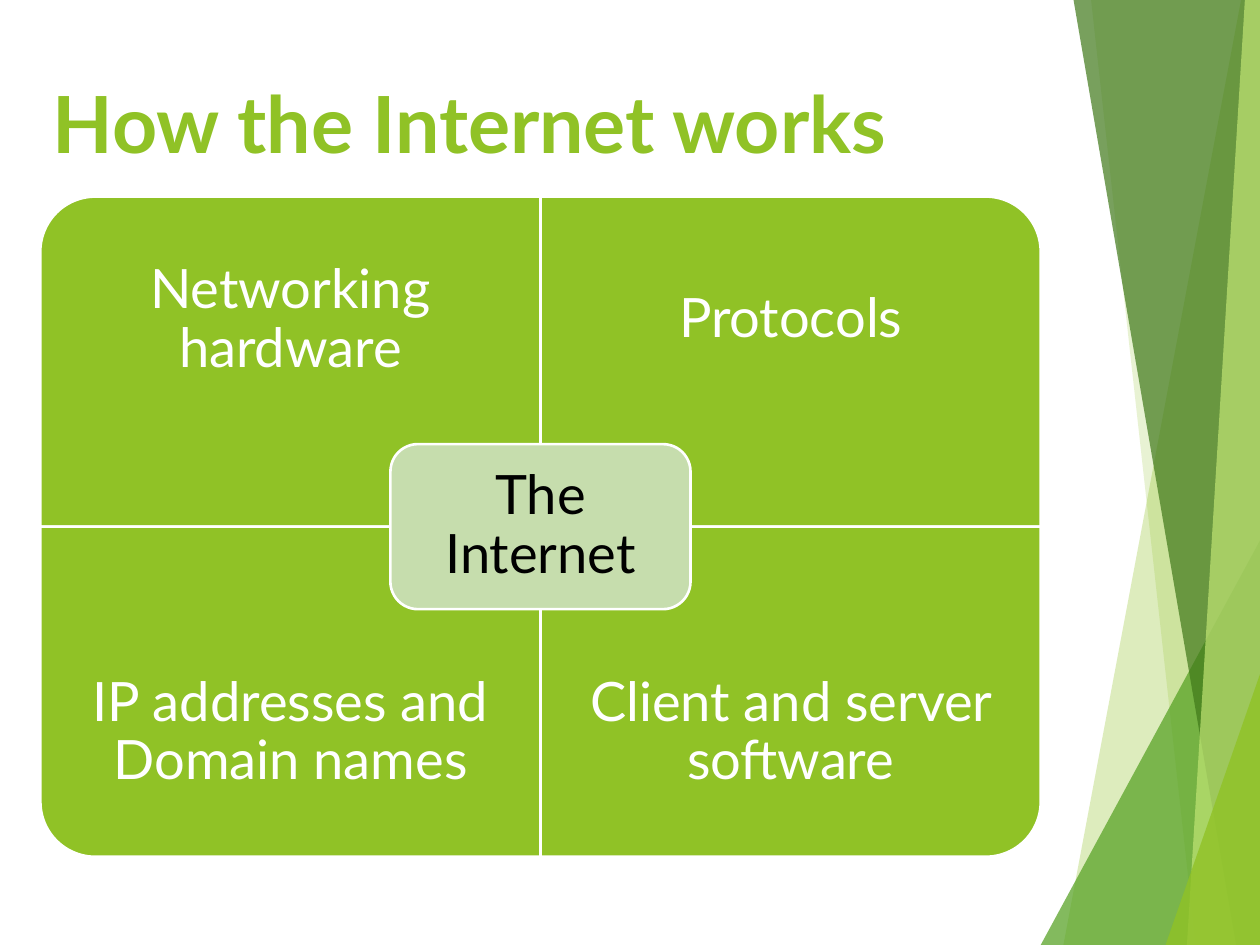
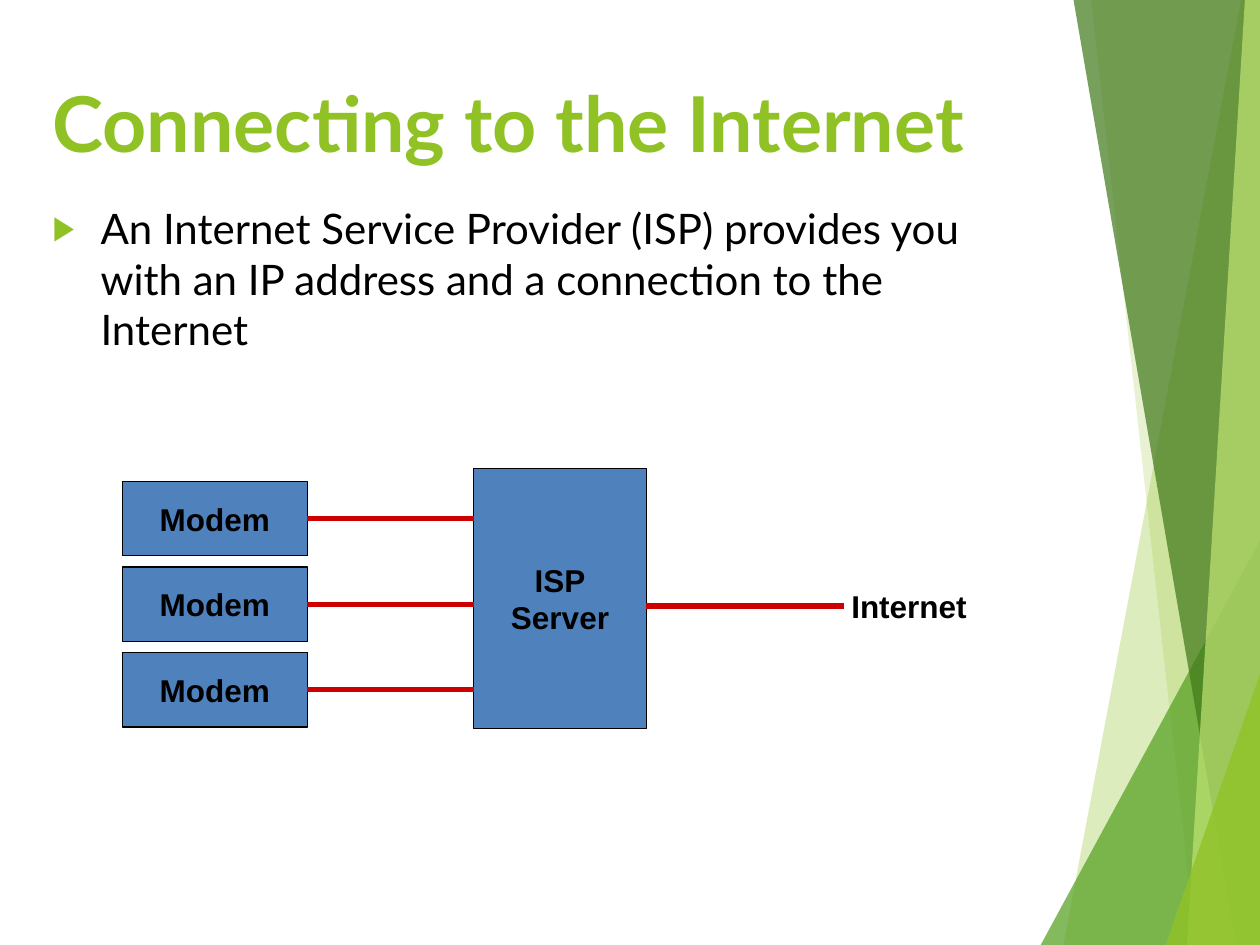
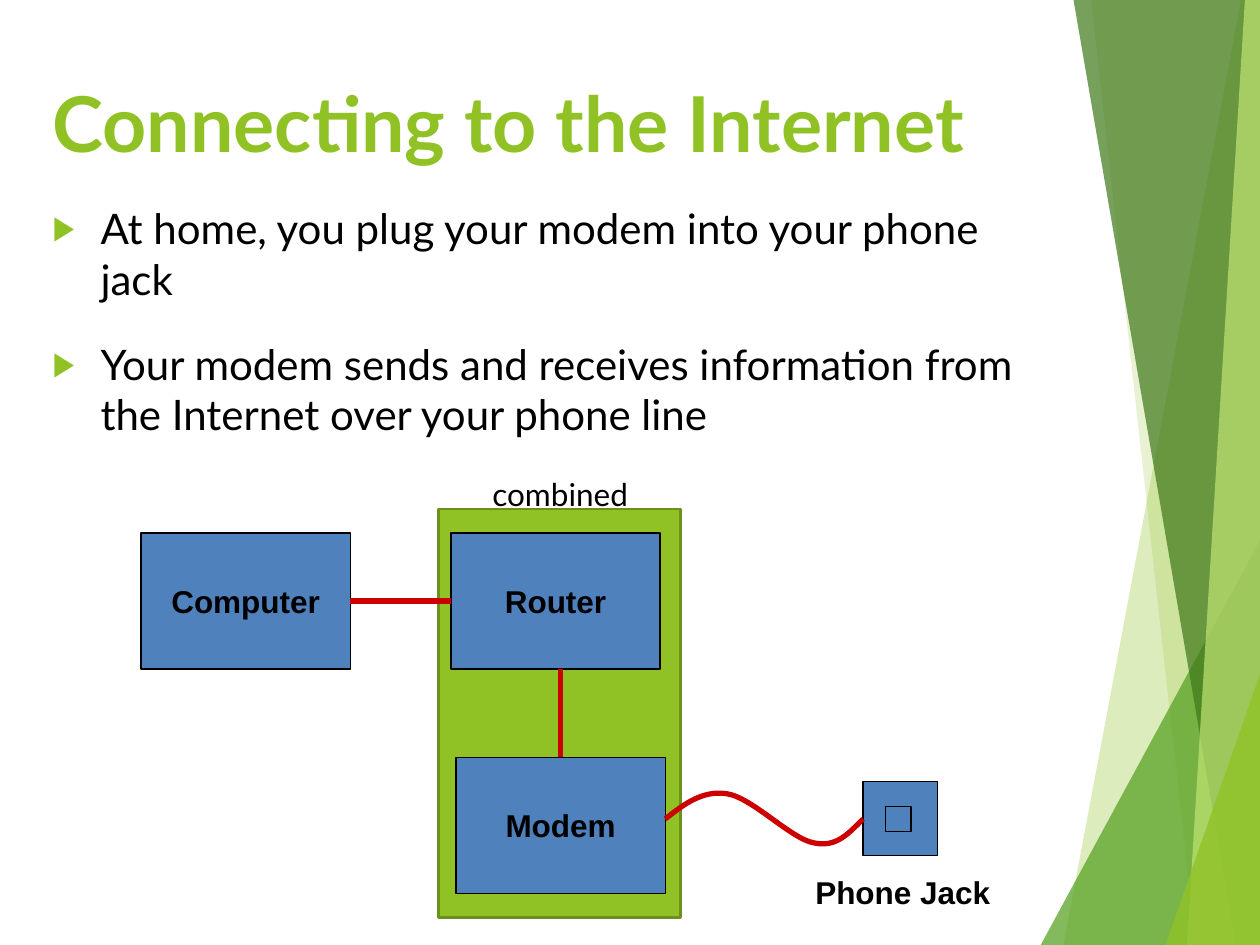
from lxml.etree import SubElement
from pptx import Presentation
from pptx.dml.color import RGBColor
from pptx.enum.shapes import MSO_CONNECTOR, MSO_SHAPE
from pptx.enum.text import MSO_ANCHOR, PP_ALIGN
from pptx.oxml.ns import qn
from pptx.util import Inches, Pt

rgb = RGBColor.from_string
LIME, BLUE, RED = "90C226", "4F81BD", "CC0000"
BLACK, WHITE = "000000", "FFFFFF"

# Content grid: two columns, two rows
LEFT, TOP, COL, ROW = 0.32, 1.56, 3.97, 2.62
WIDTH = 2 * COL


def paint(sp, fill=None, line=None, width=0.75, alpha=100):
    sp.shadow.inherit = False
    if fill:
        sp.fill.solid()
        sp.fill.fore_color.rgb = rgb(fill)
        if alpha < 100:
            clr = sp._element.spPr.find(".//" + qn("a:srgbClr"))
            SubElement(clr, qn("a:alpha"), val=str(alpha * 1000))
    else:
        sp.fill.background()
    if line:
        sp.line.color.rgb = rgb(line)
        sp.line.width = Pt(width)
    else:
        sp.line.fill.background()


def write(sp, texts, size, font="Lato", color=BLACK, bold=False, wrap=True,
          align=PP_ALIGN.CENTER, anchor=MSO_ANCHOR.MIDDLE, inset=None, spacing=None):
    tf = sp.text_frame
    tf.word_wrap = wrap
    tf.vertical_anchor = anchor
    if inset is not None:
        tf.margin_left = tf.margin_right = tf.margin_top = tf.margin_bottom = Inches(inset)
    for i, text in enumerate(texts):
        p = tf.add_paragraph() if i else tf.paragraphs[0]
        p.alignment = align
        p.line_spacing = spacing
        for j, line in enumerate(text.split("\n")):
            if j:
                p.add_line_break()
            r = p.add_run()
            r.text = line
            r.font.size, r.font.name, r.font.bold = Pt(size), font, bold
            r.font.color.rgb = rgb(color)
    return tf


prs = Presentation()
prs.slide_width, prs.slide_height = Inches(10), Inches(7.5)

# Shared side bands: colour, opacity, corners
BANDS = [
    (LIME, 30, [(9.85, 0), (8.44, 7.5), (10, 7.5), (10, 0)]),
    (LIME, 20, [(8.66, 0), (9.49, 7.5), (10, 7.5), (10, 0)]),
    ("54A021", 72, [(8.26, 7.5), (10, 4.29), (10, 7.5)]),
    ("3F7819", 70, [(8.52, 0), (9.81, 7.5), (10, 7.5), (10, 0)]),
    ("C0E474", 70, [(9.88, 0), (9.42, 7.5), (10, 7.5), (10, 0)]),
    (LIME, 80, [(9.25, 7.5), (10, 5.35), (10, 7.5)]),
]

# Title, title size and bullets of each slide
PAGES = [
    ("How the Internet works", 45, []),
    ("Connecting to the Internet", 44, [
        "An Internet Service Provider (ISP) provides you with an IP address "
        "and a connection to the Internet"]),
    ("Connecting to the Internet", 44, [
        "At home, you plug your modem into your phone jack",
        "Your modem sends and receives information from the Internet over your phone line"]),
]

for title, size, bullets in PAGES:
    s = prs.slides.add_slide(prs.slide_layouts[6])
    for color, alpha, corners in BANDS:
        start, *rest = [(Inches(x), Inches(y)) for x, y in corners]
        fb = s.shapes.build_freeform(*start)
        fb.add_line_segments(rest, close=True)
        paint(fb.convert_to_shape(), color, alpha=alpha)
    sp = s.shapes.add_textbox(Inches(LEFT), Inches(0.37), Inches(WIDTH), Inches(1.19))
    write(sp, [title], size, color=LIME, bold=True, align=PP_ALIGN.LEFT)
    if bullets:
        sp = s.shapes.add_textbox(Inches(LEFT), Inches(TOP), Inches(WIDTH), Inches(2 * ROW))
        tf = write(sp, bullets, 24, align=PP_ALIGN.LEFT, anchor=MSO_ANCHOR.TOP)
        for p in tf.paragraphs:
            p.space_before = Pt(20)
            pPr = p._p.get_or_add_pPr()
            pPr.set("marL", str(Inches(0.38)))
            pPr.set("indent", str(-Inches(0.38)))
            SubElement(SubElement(pPr, qn("a:buClr")), qn("a:srgbClr"), val=LIME)
            SubElement(pPr, qn("a:buSzPct"), val="80000")
            SubElement(pPr, qn("a:buFont"), typeface="Arial")
            SubElement(pPr, qn("a:buChar"), char="▶")

works, isp, home = prs.slides

# Slide 1: four quadrants, each with its round corner outwards
QUADRANTS = [("Networking hardware", 270), ("Protocols", 0),
             ("IP addresses and Domain names", 180), ("Client and server software", 90)]
TEXT_H = 0.75 * ROW
for i, (text, turn) in enumerate(QUADRANTS):
    row, col = divmod(i, 2)
    x, y = LEFT + col * COL, TOP + row * ROW
    w, h = (ROW, COL) if turn % 180 else (COL, ROW)
    sp = works.shapes.add_shape(MSO_SHAPE.ROUND_1_RECTANGLE, Inches(x + (COL - w) / 2),
                                Inches(y + (ROW - h) / 2), Inches(w), Inches(h))
    sp.rotation = turn
    paint(sp, LIME, WHITE, 1.5)
    sp = works.shapes.add_textbox(Inches(x), Inches(y + row * (ROW - TEXT_H)),
                                  Inches(COL), Inches(TEXT_H))
    write(sp, [text], 31, color=WHITE, inset=0.24, spacing=0.9)

# Slide 1: centre
w, h = 0.6 * COL, 0.5 * ROW
sp = works.shapes.add_shape(MSO_SHAPE.ROUNDED_RECTANGLE, Inches(LEFT + COL - w / 2),
                            Inches(TOP + ROW - h / 2), Inches(w), Inches(h))
paint(sp, "C6DDAD", WHITE, 1.5)
write(sp, ["The Internet"], 31, inset=0.19, spacing=0.9)

# Slide 3: panel behind router and modem
panel = home.shapes.add_shape(MSO_SHAPE.RECTANGLE, Inches(3.48), Inches(4.04),
                              Inches(1.92), Inches(3.24))
paint(panel, LIME, "6B901C", 1.5)

# Device boxes of slides 2 and 3
MODEM_H = 0.59
modem_tops = [3.82 + i * 0.68 for i in range(3)]
DEVICES = [(isp, "Modem", 0.97, y, 1.47, MODEM_H) for y in modem_tops] + [
    (isp, "ISP\nServer", 3.76, 3.72, 1.37, 2.06),
    (home, "Computer", 1.12, 4.23, 1.66, 1.08),
    (home, "Router", 3.58, 4.23, 1.66, 1.08),
    (home, "Modem", 3.62, 6.01, 1.66, 1.08),
    (home, "", 6.85, 6.2, 0.59, 0.59),
    (home, "", 7.03, 6.4, 0.2, 0.2),
]
boxes = []
for s, text, *at in DEVICES:
    sp = s.shapes.add_shape(MSO_SHAPE.RECTANGLE, *map(Inches, at))
    paint(sp, BLUE, BLACK)
    if text:
        write(sp, [text], 18, "Arial", bold=True, wrap=False)
    boxes.append(sp)
*modems, server, computer, router, modem, jack, socket = boxes

# Cables: slide, ends, joined box and side at each end
CABLES = [(isp, (2.44, y + MODEM_H / 2, 3.76, y + MODEM_H / 2), (m, 3), None)
          for m, y in zip(modems, modem_tops)] + [
    (isp, (5.13, 4.81, 6.7, 4.81), None, None),
    (home, (2.78, 4.77, 3.58, 4.77), (computer, 3), (router, 1)),
    (home, (4.45, 5.31, 4.45, 6.01), None, (modem, 0)),
]
for s, ends, start, stop in CABLES:
    line = s.shapes.add_connector(MSO_CONNECTOR.STRAIGHT, *map(Inches, ends))
    if start:
        line.begin_connect(*start)
    if stop:
        line.end_connect(*stop)
    line.line.color.rgb = rgb(RED)
    line.line.width = Pt(3)
    SubElement(line._element.spPr, qn("a:effectLst"))

# Slide 3: wavy phone line, three Bezier points per curve
WAVE = [(5.28, 6.5),
        (5.43, 6.38), (5.58, 6.27), (5.77, 6.3),
        (5.97, 6.33), (6.28, 6.66), (6.46, 6.69),
        (6.64, 6.73), (6.74, 6.61), (6.85, 6.5)]
start, *rest = [(Inches(x), Inches(y)) for x, y in WAVE]
fb = home.shapes.build_freeform(*start)
fb.add_line_segments(rest, close=False)
wave = fb.convert_to_shape()
paint(wave, line=RED, width=3)
segments = list(wave._element.iter(qn("a:lnTo")))
outline = segments[0].getparent()
for i in range(0, len(segments), 3):
    curve = SubElement(outline, qn("a:cubicBezTo"))
    for segment in segments[i:i + 3]:
        curve.append(segment[0])
        outline.remove(segment)

# Free labels
for s, text, x, y, w in [(isp, "Internet", 6.65, 4.61, 1.13),
                         (home, "Phone Jack", 6.37, 6.88, 1.59)]:
    sp = s.shapes.add_textbox(Inches(x), Inches(y), Inches(w), Inches(0.4))
    write(sp, [text], 18, "Arial", bold=True, wrap=False, anchor=MSO_ANCHOR.TOP)
sp = home.shapes.add_textbox(Inches(3.81), Inches(3.72), Inches(1.76), Inches(0.4))
write(sp, ["combined"], 18, align=PP_ALIGN.LEFT, anchor=MSO_ANCHOR.TOP)

prs.save("out.pptx")
